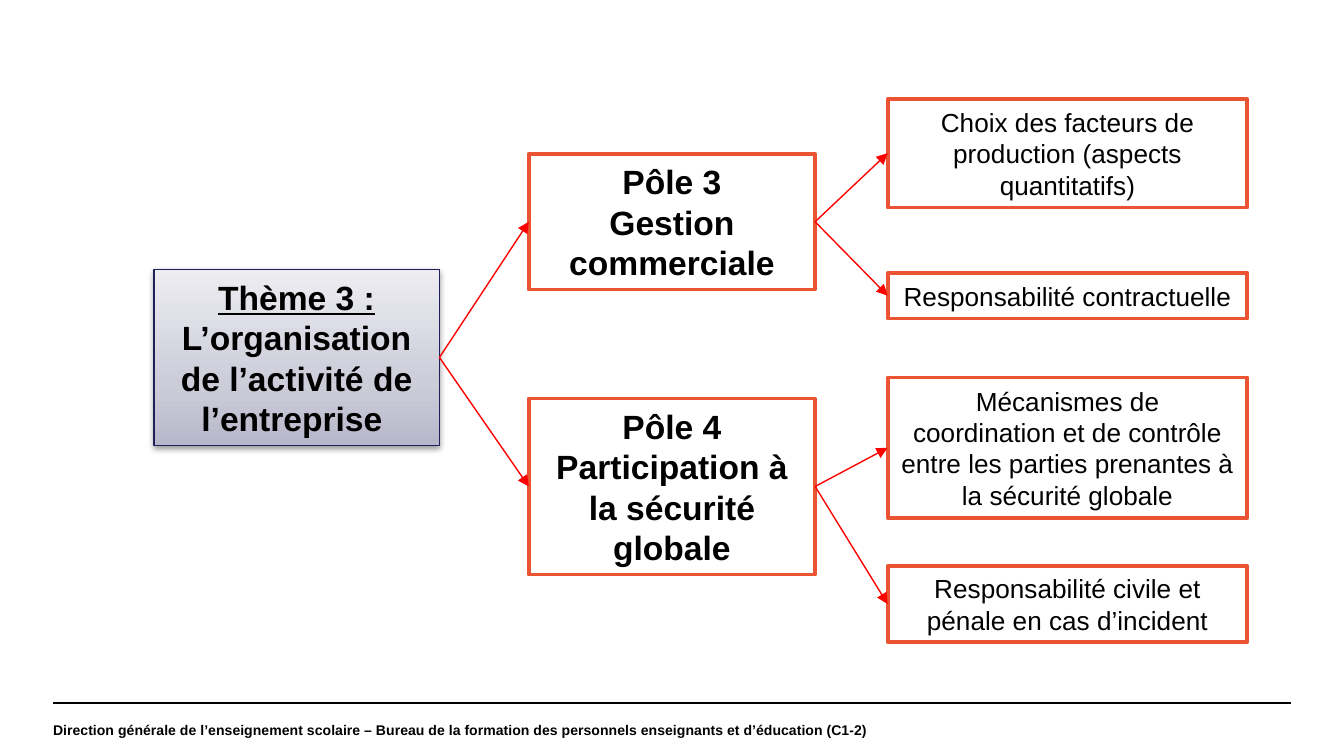
from copy import deepcopy

from lxml import etree
from pptx import Presentation
from pptx.dml.color import RGBColor
from pptx.enum.shapes import MSO_CONNECTOR as CONN, MSO_SHAPE as SHAPE
from pptx.enum.text import MSO_ANCHOR as ANCHOR, PP_ALIGN as ALIGN
from pptx.oxml.ns import qn
from pptx.util import Pt

PX = 4572  # 200 px to the inch
RIGHT, LEFT = 3, 1  # connection sites of a rectangle


def rgb(value):
    return RGBColor.from_string(value)


def style(p, size, bold):
    p.font.name, p.font.size, p.font.bold = "Arial", Pt(size), bold
    p.font.color.rgb = rgb("000000")


prs = Presentation()
prs.slide_width, prs.slide_height = 2000 * PX, 1125 * PX
s = prs.slides.add_slide(prs.slide_layouts[6])

# Footer rule and text
rule = s.shapes.add_connector(CONN.STRAIGHT, 79 * PX, 1046 * PX, 1921 * PX, 1046 * PX)
rule.line.color.rgb = rgb("000000")
rule.line.width = Pt(0.8)
etree.SubElement(rule._element.spPr, qn("a:effectLst"))

footer = s.shapes.add_textbox(79 * PX, 1047 * PX, 1866 * PX, 78 * PX)
tf = footer.text_frame
tf.word_wrap = True
tf.vertical_anchor = ANCHOR.MIDDLE
tf.margin_left = tf.margin_right = tf.margin_top = tf.margin_bottom = 0
tf.text = ("Direction générale de l’enseignement scolaire – Bureau de la formation "
           "des personnels enseignants et d’éducation (C1-2)")
style(tf.paragraphs[0], 7.5, True)

# Boxes: column, top, height, paragraphs (each a list of runs)
COLUMNS = {  # left, width, font size, bold
    "theme": (229, 425, 18, True),
    "pole": (787, 426, 18, True),
    "topic": (1321, 535, 14, False),
}
BOXES = {
    "theme": ("theme", 401, 262,
              [["Thème 3 : ", "L’organisation de l’activité de l’entreprise "]]),
    "pole 3": ("pole", 229, 202, [["Pôle 3"], ["Gestion commerciale"]]),
    "factors": ("topic", 147, 162,
                [["Choix des facteurs de production (aspects quantitatifs)"]]),
    "contract": ("topic", 406, 68, [["Responsabilité contractuelle"]]),
    "pole 4": ("pole", 593, 262,
               [["Pôle 4"], ["Participation à la sécurité globale"]]),
    "coordination": ("topic", 562, 209,
                     [["Mécanismes de coordination et de contrôle entre les "
                       "parties prenantes à la sécurité globale"]]),
    "liability": ("topic", 842, 114,
                  [["Responsabilité civile et pénale en cas d’incident"]]),
}
boxes = {}
for name, (column, top, height, paragraphs) in BOXES.items():
    left, width, size, bold = COLUMNS[column]
    sp = s.shapes.add_shape(SHAPE.RECTANGLE, left * PX, top * PX, width * PX, height * PX)
    sp.shadow.inherit = False
    sp.fill.solid()
    sp.fill.fore_color.rgb = rgb("FFFFFF")
    sp.line.color.rgb = rgb("EA5433")
    sp.line.width = Pt(2)
    tf = sp.text_frame
    tf.word_wrap = True
    for i, runs in enumerate(paragraphs):
        p = tf.add_paragraph() if i else tf.paragraphs[0]
        p.alignment = ALIGN.CENTER
        style(p, size, bold)
        for text in runs:
            p.add_run().text = text
    boxes[name] = sp

# Theme box: underlined heading, three-stop gradient and soft shadow
theme = boxes["theme"]
theme.text_frame.paragraphs[0].runs[0].font.underline = True
theme.line.color.rgb = rgb("1F1F59")
theme.line.width = Pt(0.75)
theme.fill.gradient()
theme.fill.gradient_angle = 90
stops = theme._element.spPr.find(qn("a:gradFill")).find(qn("a:gsLst"))
stops.insert(1, deepcopy(stops[0]))
for stop, position, color in zip(theme.fill.gradient_stops, (0, 0.35, 1),
                                 ("B7B7CA", "CDCDDA", "ECECF1")):
    stop.position = position
    stop.color.rgb = rgb(color)
effects = theme._element.spPr.find(qn("a:effectLst"))
shadow = etree.SubElement(effects, qn("a:outerShdw"), blurRad=str(Pt(3.1)),
                          dist=str(Pt(1.6)), dir="5400000", rotWithShape="0")
shade = etree.SubElement(shadow, qn("a:srgbClr"), val="000000")
etree.SubElement(shade, qn("a:alpha"), val="38000")

# Arrows from each box to its branches
BRANCHES = {
    "theme": ("pole 3", "pole 4"),
    "pole 3": ("factors", "contract"),
    "pole 4": ("coordination", "liability"),
}
for parent, children in BRANCHES.items():
    for child in children:
        arrow = s.shapes.add_connector(CONN.STRAIGHT, 0, 0, 0, 0)
        arrow.begin_connect(boxes[parent], RIGHT)
        arrow.end_connect(boxes[child], LEFT)
        arrow.line.color.rgb = rgb("FF0000")
        arrow.line.width = Pt(0.75)
        etree.SubElement(arrow.line._get_or_add_ln(), qn("a:tailEnd"), type="triangle")
        etree.SubElement(arrow._element.spPr, qn("a:effectLst"))

prs.save("out.pptx")
